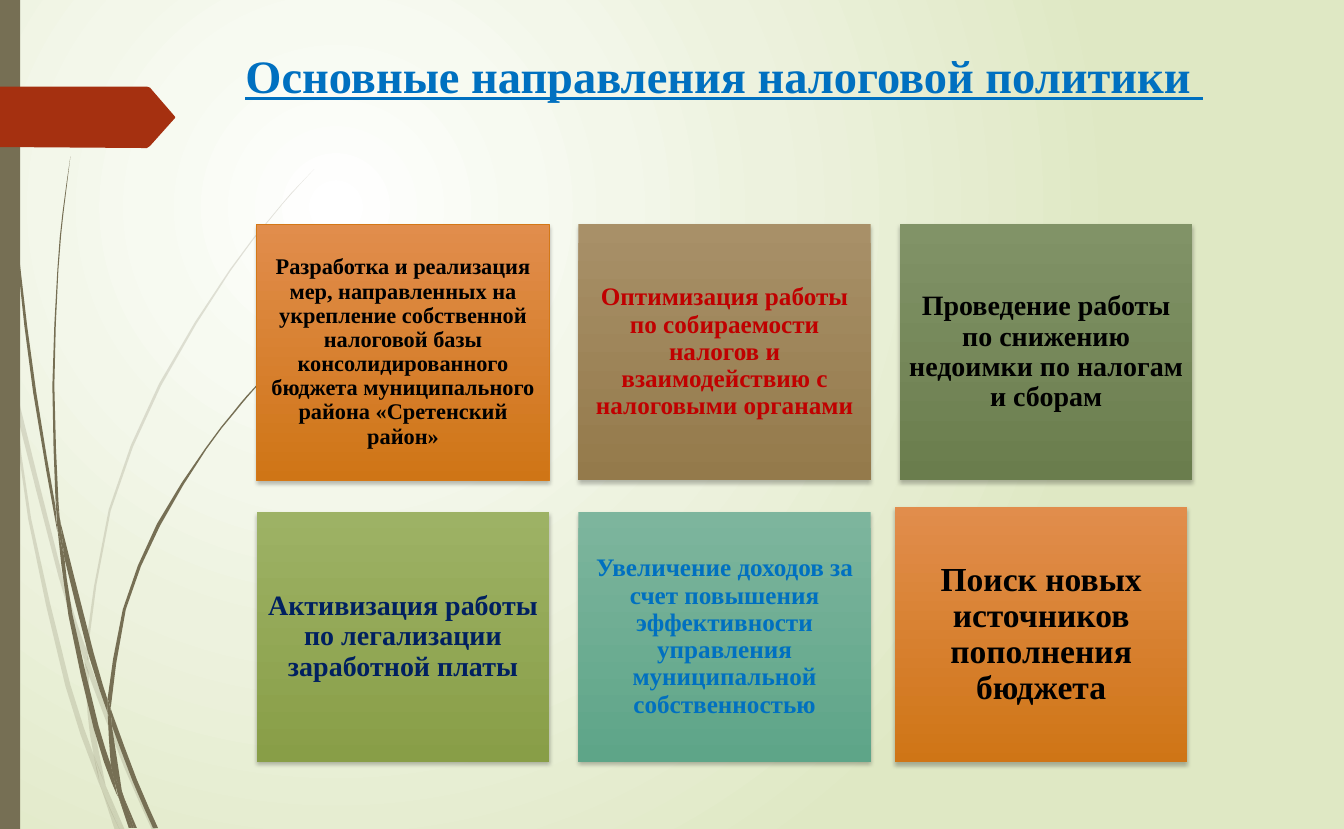
from lxml import etree
from pptx import Presentation
from pptx import util as u
from pptx.dml.color import RGBColor
from pptx.enum import shapes, text
from pptx.oxml import parse_xml
from pptx.oxml.ns import nsdecls, qn

THEME = {
    "font": "Times New Roman",
    "title_size": 33.2,
    "title": "0070C0",
    "stem": "766F54",
    "arrow": "A53010",
    "outline": "D47817",
    "background": [(0, "FFFFFF"), (24, "F7FAF1"), (36, "F3F7EA"), (55, "EDF2DE"), (100, "DFE8C4")],
    "orange": ("E18D4C", "CF7516"),
    "brown": ("A89068", "947A4B"),
    "olive": ("819367", "6A7D4D"),
    "green": ("9DB265", "889E47"),
    "teal": ("7DB59D", "5EA588"),
    "black": "000000",
    "red": "C00000",
    "navy": "002060",
    "blue": "0070C0",
}

TITLE = "Основные направления налоговой политики "

CARDS = [
    ("Разработка и реализация мер, направленных на укрепление собственной налоговой базы "
     "консолидированного бюджета муниципального района «Сретенский район»", "orange", "black", 16),
    ("Оптимизация работы по собираемости налогов и взаимодействию с налоговыми органами",
     "brown", "red", 18),
    ("Проведение работы по снижению недоимки по налогам и сборам", "olive", "black", 20),
    ("Активизация работы по легализации заработной платы", "green", "navy", 20),
    ("Увеличение доходов за счет повышения эффективности управления муниципальной собственностью",
     "teal", "blue", 18),
    ("Поиск новых источников пополнения бюджета", "orange", "black", 24),
]

PALE_BLADES = [
    ([(11, 384), (9, 353), (0, 309)], [(0, 328), (10, 378)]),
    ([(17, 412), (58, 572), (84, 657)], [(85, 643), (62, 571), (14, 379)]),
    ([(88, 670), (123, 761), (151, 824)], [(155, 824), (127, 759), (92, 666), (88, 654)]),
    ([(105, 780), (119, 824)], [(124, 824)]),
    ([(11, 384), (28, 515), (65, 681), (92, 761), (101, 784)],
     [(99, 776), (93, 749), (70, 680), (31, 515), (17, 412)]),
    ([(84, 657), (87, 709), (93, 749), (105, 780)], [(104, 775), (91, 708), (88, 667)]),
    ([(88, 654), (88, 640), (110, 507), (160, 383), (229, 269), (269, 217), (290, 192), (312, 168)],
     [(289, 192), (268, 217), (228, 268), (158, 381), (108, 506), (85, 643)]),
    ([(101, 784), (114, 824)], [(119, 824)]),
    ([(88, 670), (88, 654)], [(85, 643), (84, 658)]),
    ([(93, 749), (101, 784), (119, 824)], [(105, 780), (97, 759)]),
]

DARK_BLADES = [
    ([(3, 0), (4, 53), (7, 120), (17, 255), (33, 390), (57, 528)],
     [(55, 502), (36, 389), (19, 255), (8, 120), (5, 53), (4, 0)]),
    ([(64, 554), (88, 650), (107, 708)], [(107, 695), (93, 648), (60, 518)]),
    ([(111, 720), (132, 776), (152, 822)], [(157, 822), (136, 774), (113, 712), (110, 703)]),
    ([(57, 524), (68, 611), (93, 723), (111, 777), (118, 792)],
     [(116, 787), (110, 759), (98, 721), (72, 610), (64, 554)]),
    ([(70, 155), (62, 212), (57, 268), (52, 383), (55, 493)],
     [(60, 518), (58, 497), (54, 383), (58, 268), (63, 212)]),
    ([(122, 789), (133, 822)], [(136, 822)]),
    ([(55, 493), (57, 524)], [(64, 554), (60, 518)]),
    ([(110, 703), (125, 605), (159, 522), (205, 446), (232, 411), (246, 394), (261, 377)],
     [(260, 377), (245, 393), (231, 410), (204, 445), (156, 520), (122, 605), (107, 693)]),
    ([(118, 792), (128, 822)], [(131, 822)]),
    ([(107, 708), (110, 759), (116, 775), (122, 789)], [(121, 785), (111, 720), (109, 714)]),
    ([(107, 693), (107, 707), (111, 720)], [(110, 704)]),
    ([(110, 759), (118, 792), (131, 822)], [(133, 822), (122, 788), (116, 775)]),
]

ARROW = [(174, 117), (149, 145), (146, 147), (0, 146), (0, 86), (146, 86), (149, 87), (174, 116)]

PAGE_WIDTH, PAGE_HEIGHT = 961.2, 592.56
UNIT = 0.72
SMOOTHNESS = 2
COLUMNS = 3
GRID_LEFT, COLUMN_PITCH, CARD_WIDTH = 183.7, 230, 209
ROWS = [(160.3, 183), (365.8, 178.8)]
LAST_NUDGE, LAST_HEIGHT = 3.6, 182.7


def smooth(points):
    if len(points) < 3:
        return points
    padded = [points[0], *points, points[-1]]
    curve = [points[0]]
    for before, start, end, after in zip(padded, padded[1:], padded[2:], padded[3:]):
        for step in range(1, SMOOTHNESS + 1):
            t = step / SMOOTHNESS
            curve.append(tuple(
                0.5 * (2 * b + (c - a) * t + (2 * a - 5 * b + 4 * c - d) * t ** 2
                       + (3 * b - a - 3 * c + d) * t ** 3)
                for a, b, c, d in zip(before, start, end, after)))
    return curve


def paint(shape, color, alpha=100):
    shape.shadow.inherit = False
    shape.line.fill.background()
    shape.fill.solid()
    shape.fill.fore_color.rgb = RGBColor.from_string(color)
    if alpha < 100:
        tone = shape.element.spPr.find(qn("a:solidFill"))[0]
        etree.SubElement(tone, qn("a:alpha"), val=str(alpha * 1000))


def add_outline(page, points, color, alpha=100):
    corners = [(u.Pt(x * UNIT), u.Pt(y * UNIT)) for x, y in points]
    builder = page.shapes.build_freeform(*corners[0])
    builder.add_line_segments(corners[1:], close=True)
    paint(builder.convert_to_shape(), color, alpha)


def write(box, words, *, size, color, align, anchor, insets, spacing=1.0, underline=False):
    frame = box.text_frame
    frame.word_wrap = True
    frame.vertical_anchor = anchor
    side, top = insets
    frame.margin_left = frame.margin_right = u.Pt(side)
    frame.margin_top = frame.margin_bottom = u.Pt(top)
    para = frame.paragraphs[0]
    para.alignment = align
    para.line_spacing = spacing
    span = para.add_run()
    span.text = words
    span.font.name = THEME["font"]
    span.font.size = u.Pt(size)
    span.font.bold = True
    span.font.underline = underline
    span.font.color.rgb = RGBColor.from_string(color)


def add_background(page):
    page.background.fill.solid()
    holder = page.element.find(".//" + qn("p:bgPr"))
    stops = "".join(f'<a:gs pos="{place * 1000}"><a:srgbClr val="{color}"/></a:gs>'
                    for place, color in THEME["background"])
    holder.replace(holder[0], parse_xml(
        f'<a:gradFill {nsdecls("a")} rotWithShape="1"><a:gsLst>{stops}</a:gsLst><a:path path="circle">'
        '<a:fillToRect l="50000" t="50000" r="100000" b="100000"/></a:path></a:gradFill>'))


def add_card(page, index, words, fill, color, size):
    row, column = divmod(index, COLUMNS)
    left = GRID_LEFT + column * COLUMN_PITCH
    top, height = ROWS[row]
    if index == len(CARDS) - 1:
        left, top, height = left - LAST_NUDGE, top - LAST_NUDGE, LAST_HEIGHT
    card = page.shapes.add_shape(shapes.MSO_SHAPE.RECTANGLE, u.Pt(left), u.Pt(top),
                                 u.Pt(CARD_WIDTH), u.Pt(height))
    card.fill.gradient()
    card.fill.gradient_angle = 270
    for stop, tone in zip(card.fill.gradient_stops, THEME[fill]):
        stop.color.rgb = RGBColor.from_string(tone)
    if index == 0:
        card.line.color.rgb = RGBColor.from_string(THEME["outline"])
        card.line.width = u.Pt(0.75)
    else:
        card.line.fill.background()
    card.shadow.inherit = False
    card.element.spPr.find(qn("a:effectLst")).append(parse_xml(
        f'<a:outerShdw {nsdecls("a")} blurRad="{u.Pt(3)}" dist="{u.Pt(2)}" dir="5400000" rotWithShape="0">'
        '<a:srgbClr val="000000"><a:alpha val="25000"/></a:srgbClr></a:outerShdw>'))
    write(card, words, size=size, color=THEME[color], align=text.PP_ALIGN.CENTER,
          anchor=text.MSO_ANCHOR.MIDDLE, insets=(size * 0.3, size * 0.3), spacing=0.9)


def main():
    deck = Presentation()
    deck.slide_width, deck.slide_height = u.Pt(PAGE_WIDTH), u.Pt(PAGE_HEIGHT)
    page = deck.slides.add_slide(deck.slide_layouts[6])
    add_background(page)
    for blades, alpha in ((PALE_BLADES, 20), (DARK_BLADES, 100)):
        for down, back in blades:
            add_outline(page, smooth(down) + smooth(back), THEME["stem"], alpha)
    strip = page.shapes.add_shape(shapes.MSO_SHAPE.RECTANGLE, 0, 0, u.Pt(14.4), u.Pt(PAGE_HEIGHT))
    paint(strip, THEME["stem"])
    add_outline(page, ARROW, THEME["arrow"])
    title = page.shapes.add_textbox(u.Pt(168.5), u.Pt(29.5), u.Pt(705.6), u.Pt(64.8))
    write(title, TITLE, size=THEME["title_size"], color=THEME["title"], align=text.PP_ALIGN.LEFT,
          anchor=text.MSO_ANCHOR.TOP, insets=(7.2, 4), underline=True)
    for index, card in enumerate(CARDS):
        add_card(page, index, *card)
    deck.save("out.pptx")


if __name__ == "__main__":
    main()
